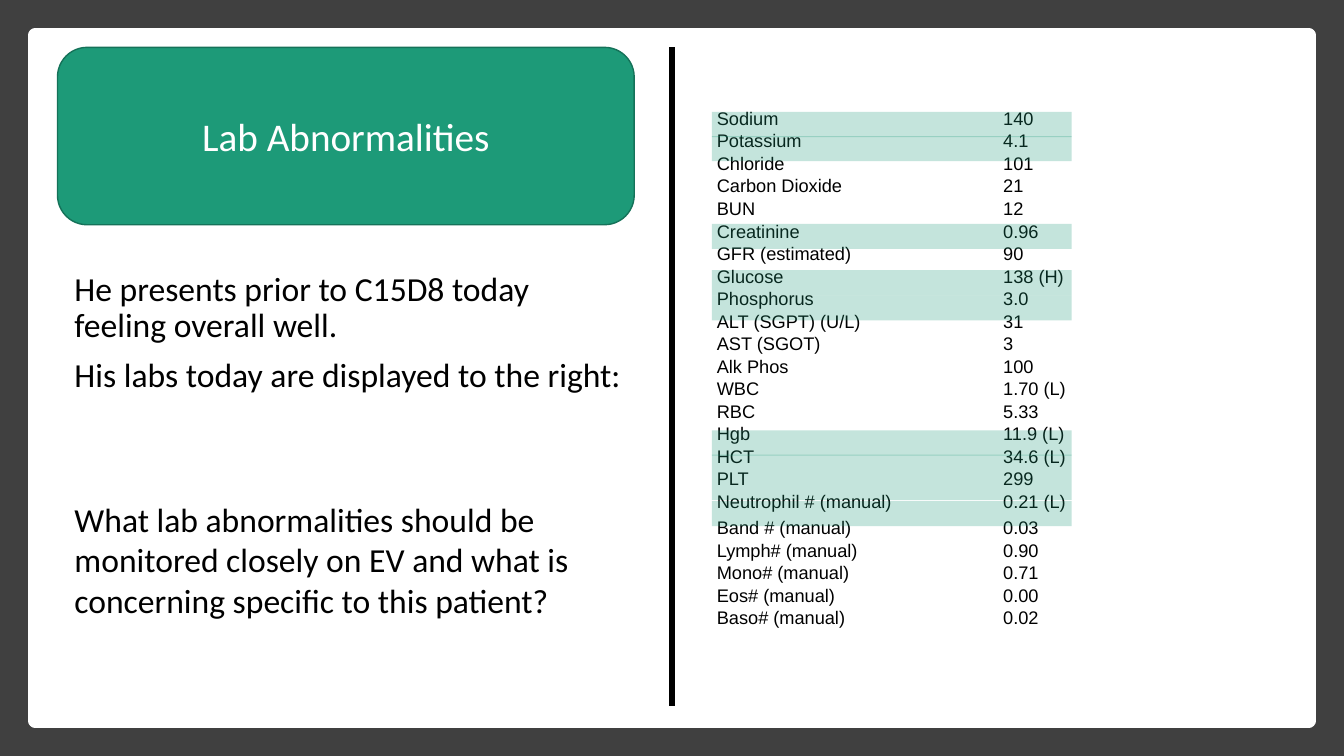
from lxml import etree
from pptx import Presentation
from pptx.dml.color import RGBColor
from pptx.enum import shapes, text
from pptx.oxml import ns
from pptx.util import Inches, Pt

# Content
TITLE = "Lab Abnormalities"
INTRO = ["He presents prior to C15D8 today feeling overall well.",
         "His labs today are displayed to the right:"]
QUESTION = ["What lab abnormalities should be monitored closely on EV "
            "and what is concerning specific to this patient?"]
LABS = [
    ("Sodium", "140"), ("Potassium", "4.1"), ("Chloride", "101"),
    ("Carbon Dioxide", "21"), ("BUN", "12"), ("Creatinine", "0.96"),
    ("GFR (estimated)", "90"), ("Glucose", "138 (H)"), ("Phosphorus", "3.0"),
    ("ALT (SGPT) (U/L)", "31"), ("AST (SGOT)", "3"), ("Alk Phos", "100"),
    ("WBC", "1.70 (L)"), ("RBC", "5.33"), ("Hgb", "11.9 (L)"),
    ("HCT", "34.6 (L)"), ("PLT", "299"), ("Neutrophil # (manual)", "0.21 (L)"),
    ("Band # (manual)", "0.03"), ("Lymph# (manual)", "0.90"),
    ("Mono# (manual)", "0.71"), ("Eos# (manual)", "0.00"),
    ("Baso# (manual)", "0.02"),
]
TALL_LAB = "Neutrophil # (manual)"
# Highlight bands: top and height
BANDS = [(1.35, 0.25), (2.93, 0.25), (2.68, 0.25), (2.22, 0.25),
         (4.97, 0.25), (1.11, 0.25), (4.27, 0.25), (4.51, 0.45)]
COLORS = {"frame": "404040", "paper": "FFFFFF", "ink": "000000",
          "green": "1D9A78", "edge": "157259"}
TABLE_HEIGHT, TALL_ROW = 5.18, 0.26
COLUMNS = [2.84, 1.39]


def color(name):
    return RGBColor.from_string(COLORS[name])


def write(frame, lines, size=24, font="Calibri", ink="ink", align=None,
          spacing=None, gap=0):
    frame.word_wrap = True
    for index, line in enumerate(lines):
        para = frame.paragraphs[0] if index == 0 else frame.add_paragraph()
        para.alignment = align
        if spacing:
            para.line_spacing = spacing
        if index:
            para.space_before = Pt(gap)
        span = para.add_run()
        span.text = line
        span.font.size, span.font.name = Pt(size), font
        span.font.color.rgb = color(ink)


def add_block(parent, place, fill, line=None, width=1, alpha=None,
              kind=shapes.MSO_SHAPE.RECTANGLE):
    block = parent.add_shape(kind, *map(Inches, place))
    block.shadow.inherit = False
    block.fill.solid()
    block.fill.fore_color.rgb = color(fill)
    if line:
        block.line.color.rgb = color(line)
        block.line.width = Pt(width)
    else:
        block.line.fill.background()
    if alpha:
        tint = block.fill._xPr.find(".//" + ns.qn("a:srgbClr"))
        etree.SubElement(tint, ns.qn("a:alpha"), val=str(alpha * 1000))
    return block


def add_borders(cell, name):
    properties = cell._tc.get_or_add_tcPr()
    for index, side in enumerate(("lnL", "lnR", "lnT", "lnB")):
        border = etree.Element(ns.qn("a:" + side), w=str(Pt(1)))
        fill = etree.SubElement(border, ns.qn("a:solidFill"))
        etree.SubElement(fill, ns.qn("a:srgbClr"), val=COLORS[name])
        properties.insert(index, border)


deck = Presentation()
deck.slide_width, deck.slide_height = Inches(13.33), Inches(7.5)
page = deck.slides.add_slide(deck.slide_layouts[6])

# Frame and paper
add_block(page.shapes, (0, 0, 13.33, 7.5), "frame")
add_block(page.shapes, (0.35, 0.35, 12.63, 6.8), "paper", line="paper", width=10)

# Introduction
box = page.shapes.add_textbox(*map(Inches, (0.64, 2.65, 5.65, 2.2)))
write(box.text_frame, INTRO, spacing=0.9, gap=10)

# Title
title = add_block(page.shapes, (0.57, 0.47, 5.72, 1.76), "green", line="edge",
                  kind=shapes.MSO_SHAPE.ROUNDED_RECTANGLE)
title.text_frame.vertical_anchor = text.MSO_ANCHOR.MIDDLE
write(title.text_frame, [TITLE], size=28, ink="paper", align=text.PP_ALIGN.CENTER)

# Divider
divider = page.shapes.add_connector(shapes.MSO_CONNECTOR.STRAIGHT,
                                    *map(Inches, (6.67, 0.47, 6.67, 7)))
divider.line.color.rgb = color("ink")
divider.line.width = Pt(4.25)
etree.SubElement(divider._element.spPr, ns.qn("a:effectLst"))

# Lab table
table = page.shapes.add_table(
    len(LABS), len(COLUMNS),
    *map(Inches, (7.04, 1.08, sum(COLUMNS), TABLE_HEIGHT))).table
table.first_row = table.horz_banding = False
for column, width in zip(table.columns, COLUMNS):
    column.width = Inches(width)
row_height = (TABLE_HEIGHT - TALL_ROW) / (len(LABS) - 1)
for row, lab in zip(table.rows, LABS):
    row.height = Inches(TALL_ROW if lab[0] == TALL_LAB else row_height)
    for cell, value in zip(row.cells, lab):
        cell.margin_left = Inches(0.07)
        cell.margin_right = cell.margin_top = cell.margin_bottom = 0
        cell.fill.background()
        add_borders(cell, "paper")
        write(cell.text_frame, [value], size=13, font="Arial")

# Question
box = page.shapes.add_textbox(*map(Inches, (0.64, 4.9, 5.65, 1.62)))
write(box.text_frame, QUESTION)

# Highlight bands
group = page.shapes.add_group_shape()
for top, height in BANDS:
    add_block(group.shapes, (7.06, top, 3.57, height), "green", alpha=26)

deck.save("out.pptx")
